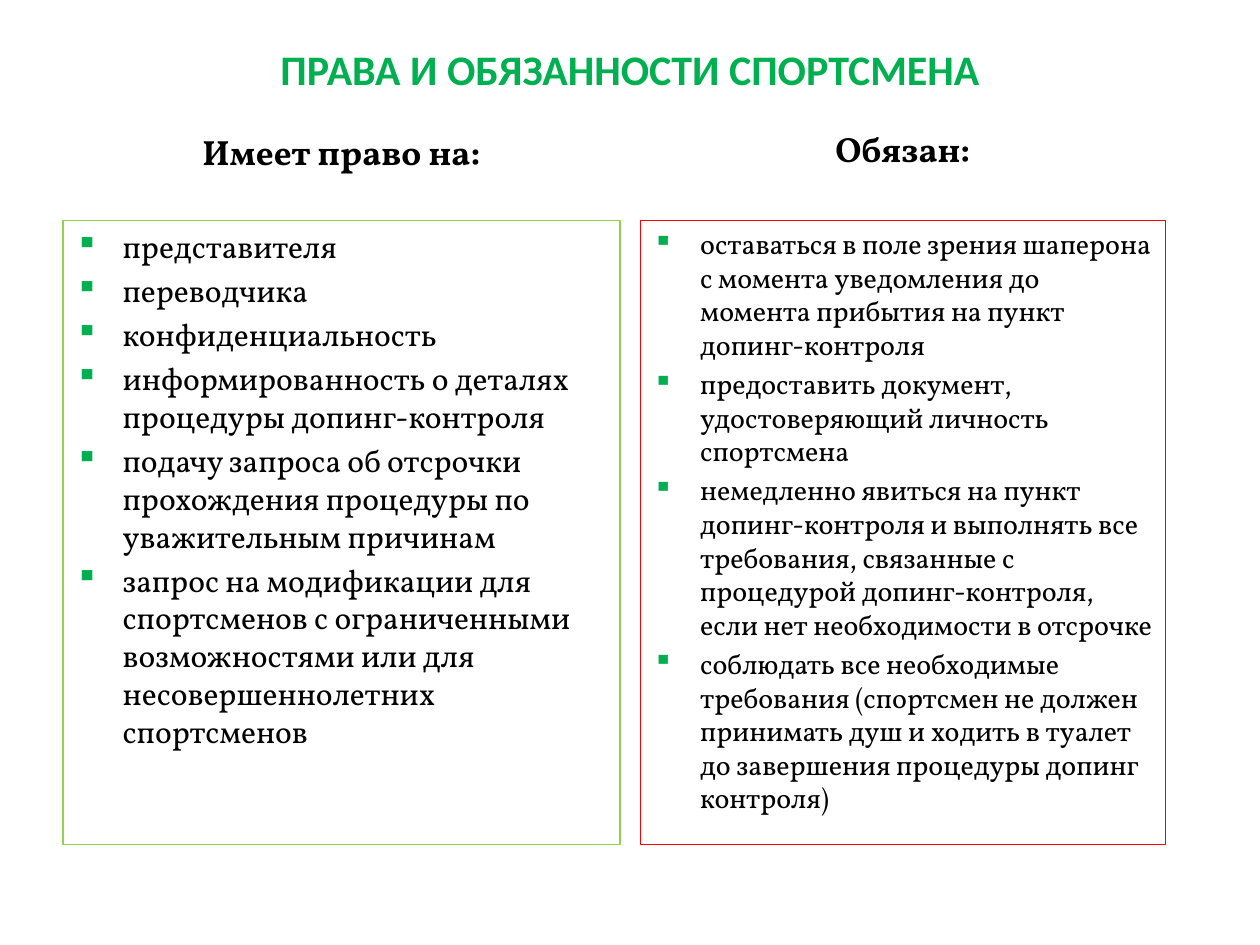
from lxml import etree
from pptx import Presentation
from pptx.dml.color import RGBColor
from pptx.enum.shapes import MSO_SHAPE
from pptx.enum.text import MSO_ANCHOR, PP_ALIGN
from pptx.oxml.ns import qn
from pptx.util import Pt

RECTANGLE = MSO_SHAPE.RECTANGLE
TOP, MIDDLE = MSO_ANCHOR.TOP, MSO_ANCHOR.MIDDLE
LEFT, CENTER = PP_ALIGN.LEFT, PP_ALIGN.CENTER

GREEN = RGBColor(0x00, 0xB0, 0x50)
LIGHT_GREEN = RGBColor(0x92, 0xD0, 0x50)
RED = RGBColor(0xFF, 0x00, 0x00)
BLACK = RGBColor(0x00, 0x00, 0x00)

TITLE_FORMAT = {"name": "Calibri", "size": Pt(24), "bold": True}
HEADING_FORMAT = {"name": "Vollkorn", "size": Pt(20), "bold": True}
INDENT = Pt(27)
SPACE_SHARE = 0.2

RIGHTS = [
    "представителя",
    "переводчика",
    "конфиденциальность",
    "информированность о деталях процедуры допинг-контроля",
    "подачу запроса об отсрочки прохождения процедуры по уважительным причинам",
    "запрос на модификации для спортсменов с ограниченными возможностями "
    "или для несовершеннолетних спортсменов",
]
DUTIES = [
    "оставаться в поле зрения шаперона с момента уведомления до момента "
    "прибытия на пункт допинг-контроля",
    "предоставить документ, удостоверяющий личность спортсмена",
    "немедленно явиться на пункт допинг-контроля и выполнять все требования, "
    "связанные с процедурой допинг-контроля, если нет необходимости в отсрочке",
    "соблюдать все необходимые требования (спортсмен не должен принимать душ "
    "и ходить в туалет до завершения процедуры допинг контроля)",
]


def write_paragraph(paragraph, text, font_format, color, alignment):
    """Write one formatted run into the paragraph."""
    paragraph.alignment = alignment
    run = paragraph.add_run()
    run.text = text
    for name, value in font_format.items():
        setattr(run.font, name, value)
    run.font.color.rgb = color


def indent_paragraph(paragraph, size):
    """Give the paragraph a hanging indent and a space in proportion to its size."""
    paragraph.space_before = Pt(size.pt * SPACE_SHARE)
    properties = paragraph._p.get_or_add_pPr()
    properties.set("marL", str(INDENT))
    properties.set("indent", str(-INDENT))
    return properties


def add_bullet(properties):
    """Add a green square bullet to the paragraph properties."""
    color = etree.SubElement(properties, qn("a:buClr"))
    etree.SubElement(color, qn("a:srgbClr"), val=str(GREEN))
    etree.SubElement(properties, qn("a:buChar"), char="▪")


def add_line_of_text(slide, box, text, font_format, color, anchor):
    """Place a centred single line of text in the box and return its paragraph."""
    frame = slide.shapes.add_textbox(*map(Pt, box)).text_frame
    frame.word_wrap = True
    frame.vertical_anchor = anchor
    paragraph = frame.paragraphs[0]
    write_paragraph(paragraph, text, font_format, color, CENTER)
    return paragraph


def add_list_box(slide, box, items, size, line_color):
    """Place an outlined rectangle holding a bulleted list."""
    shape = slide.shapes.add_shape(RECTANGLE, *map(Pt, box))
    shape.shadow.inherit = False
    shape.fill.background()
    shape.line.color.rgb = line_color
    shape.line.width = Pt(0.75)
    frame = shape.text_frame
    frame.word_wrap = True
    frame.vertical_anchor = TOP
    font_format = {"name": "Vollkorn", "size": size}
    for index, item in enumerate(items):
        paragraph = frame.add_paragraph() if index else frame.paragraphs[0]
        write_paragraph(paragraph, item, font_format, BLACK, LEFT)
        add_bullet(indent_paragraph(paragraph, size))


def add_column(slide, box, heading, heading_anchor, items, size, line_color):
    """Place a heading at the top of the box and its list below."""
    left, top, width, height = box
    heading_height, list_offset = 27.36, 54.72
    paragraph = add_line_of_text(slide, (left, top, width, heading_height), heading,
                                 HEADING_FORMAT, BLACK, heading_anchor)
    indent_paragraph(paragraph, HEADING_FORMAT["size"])
    list_box = (left, top + list_offset, width, height - list_offset)
    add_list_box(slide, list_box, items, size, line_color)


def main():
    """Build the slide and save it."""
    presentation = Presentation()
    presentation.slide_width, presentation.slide_height = Pt(720), Pt(540)
    slide = presentation.slides.add_slide(presentation.slide_layouts[6])
    add_line_of_text(slide, (0, 9.36, 720, 59.76), "ПРАВА И ОБЯЗАННОСТИ СПОРТСМЕНА",
                     TITLE_FORMAT, GREEN, MIDDLE)
    add_column(slide, (36, 71.28, 318.24, 411.12), "Имеет право на:", TOP,
               RIGHTS, Pt(18), LIGHT_GREEN)
    add_column(slide, (366, 71.28, 300, 411.12), "Обязан:", MIDDLE,
               DUTIES, Pt(16), RED)
    presentation.save("out.pptx")


if __name__ == "__main__":
    main()
